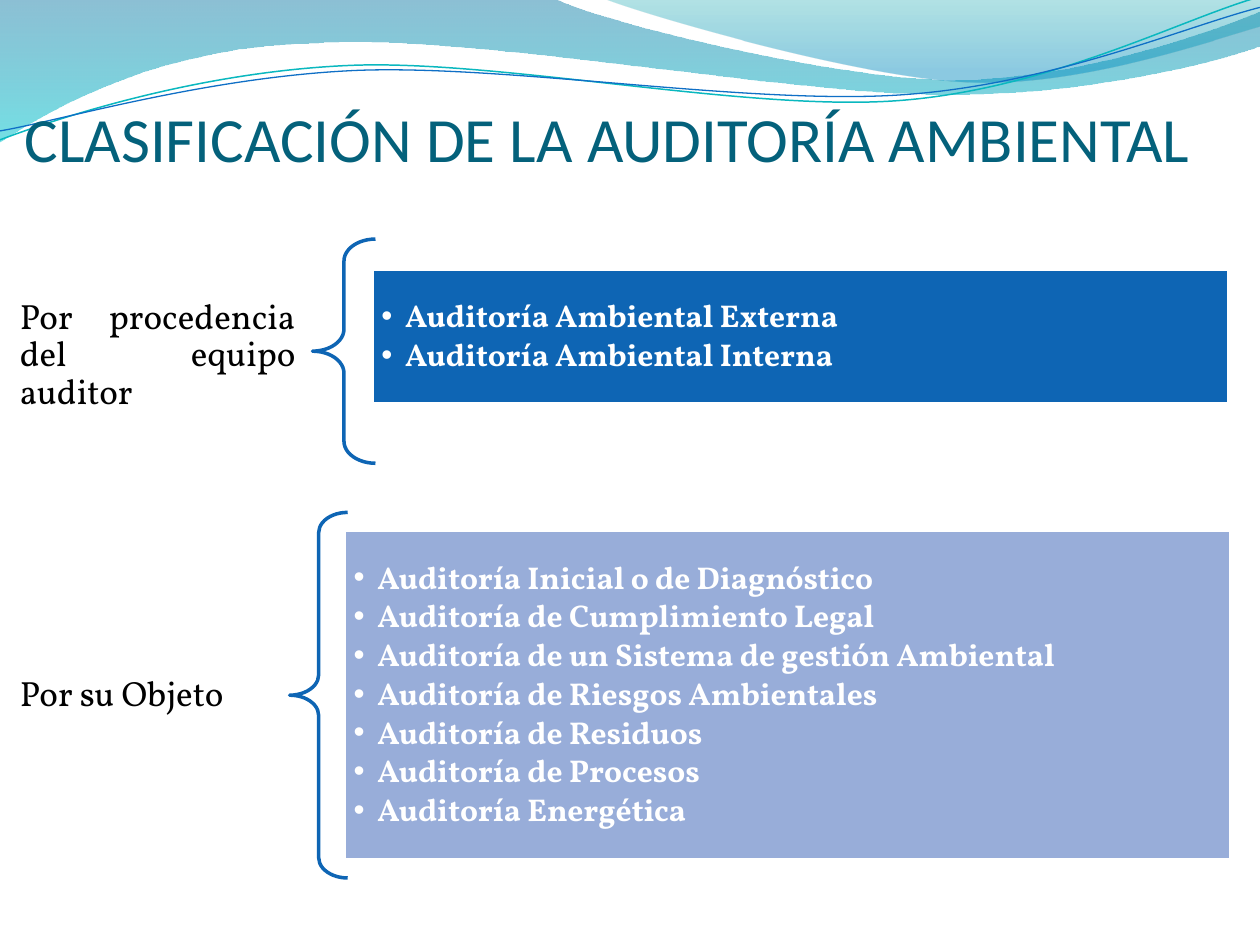
from lxml.etree import SubElement
from pptx import Presentation
from pptx.dml.color import RGBColor
from pptx.enum.shapes import MSO_SHAPE as Preset
from pptx.enum.text import MSO_ANCHOR as Anchor, MSO_AUTO_SIZE as AutoSize, PP_ALIGN as Align
from pptx.oxml.ns import qn
from pptx.util import Cm, Pt

COLORS = {name: RGBColor.from_string(value) for name, value in {
    "title": "04617B", "label": "000000", "white": "FFFFFF",
    "blue": "0E65B4", "pale": "98ADD9",
}.items()}

deck = Presentation()
deck.slide_width, deck.slide_height = Cm(25.4), Cm(19.05)
page = deck.slides.add_slide(deck.slide_layouts[5])


def draw_outline(start, segments, close):
    """Draw a freeform in cm: two numbers are a line, six a Bézier curve."""
    points = [(Cm(x), Cm(y)) for segment in segments
              for x, y in zip(segment[::2], segment[1::2])]
    builder = page.shapes.build_freeform(Cm(start[0]), Cm(start[1]))
    builder.add_line_segments(points, close=close)
    outline = builder.convert_to_shape()
    outline.shadow.inherit = False
    # Gather the three points of each curve into one Bézier node
    line_nodes = iter(list(outline._element.spPr.iter(qn("a:lnTo"))))
    for segment in segments:
        nodes = [next(line_nodes) for _ in segment[::2]]
        if len(nodes) == 3:
            curve = nodes[0]
            bezier = SubElement(curve.getparent(), qn("a:cubicBezTo"))
            curve.addprevious(bezier)
            for node in nodes:
                bezier.append(node[0])
                node.getparent().remove(node)
    return outline


def set_frame(shape, anchor, margins):
    """Set wrapping, anchor and margins (left, top, right, bottom, in cm)."""
    frame = shape.text_frame
    frame.word_wrap = True
    frame.auto_size = AutoSize.NONE
    frame.vertical_anchor = anchor
    (frame.margin_left, frame.margin_top,
     frame.margin_right, frame.margin_bottom) = map(Cm, margins)
    return frame


# Translucent waves: start, segments, gradient stops (position, colour, opacity %)
WAVES = [
    ((0, 0), [(11.18, -0.03), (12.09, 0.43, 16.87, 1.6, 19.25, 1.6),
              (21.67, 1.6, 24.33, 0.66, 25.4, 0.23), (25.43, 0.91),
              (24.97, 1.12, 22.1, 1.93, 18.95, 1.9),
              (15.8, 1.9, 9.7, 0.71, 6.53, 0.86),
              (3.25, 0.91, 1.17, 2.11, -0.03, 2.87)],
     [(0, "0074A1", 45), (1, "00C6CF", 55)]),
    ((12.17, -0.03), [(12.93, 0.28, 17.32, 1.57, 19.53, 1.65),
                      (21.74, 1.75, 24.41, 0.81, 25.4, 0.53), (25.4, 0)],
     [(0, "00A1A9", 30), (0.8, "008BBF", 45)]),
]
for start, segments, stops in WAVES:
    wave = draw_outline(start, segments, close=True)
    wave.line.fill.background()
    wave.fill.gradient()
    wave.fill.gradient_angle = 270
    for stop, (position, color, _) in zip(wave.fill.gradient_stops, stops):
        stop.position = position
        stop.color.rgb = RGBColor.from_string(color)
    for color_node, (_, _, opacity) in zip(wave._element.spPr.iter(qn("a:srgbClr")), stops):
        SubElement(color_node, qn("a:alpha"), val=str(opacity * 1000))

# Thin wave lines
WAVE_LINES = [
    ((0, 2.82), [(1.22, 2.36, 4.01, 1.45, 7.04, 1.32),
                 (10.03, 1.19, 15.06, 2.26, 18.11, 2.03),
                 (21.16, 1.8, 23.83, 0.38, 25.35, -0.05)], "0AB8BF", 0.85),
    ((0, 2.64), [(1.19, 2.44, 4.17, 1.55, 7.19, 1.42),
                 (10.24, 1.3, 15.16, 2.13, 18.21, 1.91),
                 (21.23, 1.7, 23.9, 0.53, 25.4, 0.15)], "0F6FC6", 0.75),
]
for start, segments, color, width in WAVE_LINES:
    wave_line = draw_outline(start, segments, close=False)
    wave_line.fill.background()
    wave_line.line.color.rgb = RGBColor.from_string(color)
    wave_line.line.width = Pt(width)

# Classification groups: label, brace and list, each with its place in cm
GROUPS = [
    ("Por procedencia del equipo auditor", (0, 5.38, 6.36, 3.58),
     (6.3, 4.82, 1.27, 4.52), (7.51, 5.43, 17.27, 2.72), "blue",
     ["Auditoría Ambiental Externa", "Auditoría Ambiental Interna"]),
    ("Por su Objeto", (0, 12.22, 5.87, 3.58),
     (5.84, 10.33, 1.17, 7.37), (6.95, 10.7, 17.87, 6.63), "pale",
     ["Auditoría Inicial o de Diagnóstico", "Auditoría de Cumplimiento Legal",
      "Auditoría de un Sistema de gestión Ambiental",
      "Auditoría de Riesgos Ambientales", "Auditoría de Residuos",
      "Auditoría de Procesos", "Auditoría Energética"]),
]
for label, label_place, brace_place, list_place, fill, items in GROUPS:
    label_box = page.shapes.add_textbox(*map(Cm, label_place))
    para = set_frame(label_box, Anchor.MIDDLE, (0.4, 0.15, 0.4, 0.15)).paragraphs[0]
    para.text = label
    para.alignment = Align.JUSTIFY
    para.line_spacing = 0.9
    para.font.name, para.font.size = "Vollkorn", Pt(20)
    para.font.color.rgb = COLORS["label"]

    brace = page.shapes.add_shape(Preset.LEFT_BRACE, *map(Cm, brace_place))
    brace.adjustments[0] = 0.35
    brace.shadow.inherit = False
    brace.fill.background()
    brace.line.color.rgb = COLORS["blue"]
    brace.line.width = Pt(2)

    list_box = page.shapes.add_shape(Preset.RECTANGLE, *map(Cm, list_place))
    list_box.shadow.inherit = False
    list_box.fill.solid()
    list_box.fill.fore_color.rgb = COLORS[fill]
    list_box.line.color.rgb = COLORS["white"]
    list_box.line.width = Pt(2)
    frame = set_frame(list_box, Anchor.MIDDLE, (0.18,) * 4)
    frame.text = "\n".join(items)
    for para in frame.paragraphs:
        para.level = 1
        para.alignment = Align.LEFT
        para.line_spacing = 0.9
        para.space_after = Pt(2.7)
        para.font.name, para.font.size, para.font.bold = "Vollkorn", Pt(18), True
        para.font.color.rgb = COLORS["white"]
        properties = para._p.get_or_add_pPr()
        properties.set("marL", str(Cm(0.48)))
        properties.set("indent", str(-Cm(0.48)))
        for tag, attributes in (("a:buFont", {"typeface": "Arial"}),
                                ("a:buChar", {"char": "•"})):
            bullet = SubElement(properties, qn(tag), attributes)
            properties.insert_element_before(bullet, "a:tabLst", "a:defRPr", "a:extLst")

# Title, in front of the waves
title = page.shapes.title
title.left, title.top, title.width, title.height = map(Cm, (0.5, 1.73, 24.21, 1.8))
para = set_frame(title, Anchor.BOTTOM, (0, 0.13, 0, 0)).paragraphs[0]
para.text = "CLASIFICACIÓN DE LA AUDITORÍA AMBIENTAL"
para.alignment = Align.LEFT
para.font.name, para.font.size = "Calibri", Pt(36)
para.font.color.rgb = COLORS["title"]
page.shapes._spTree.append(title._element)

deck.save("out.pptx")
